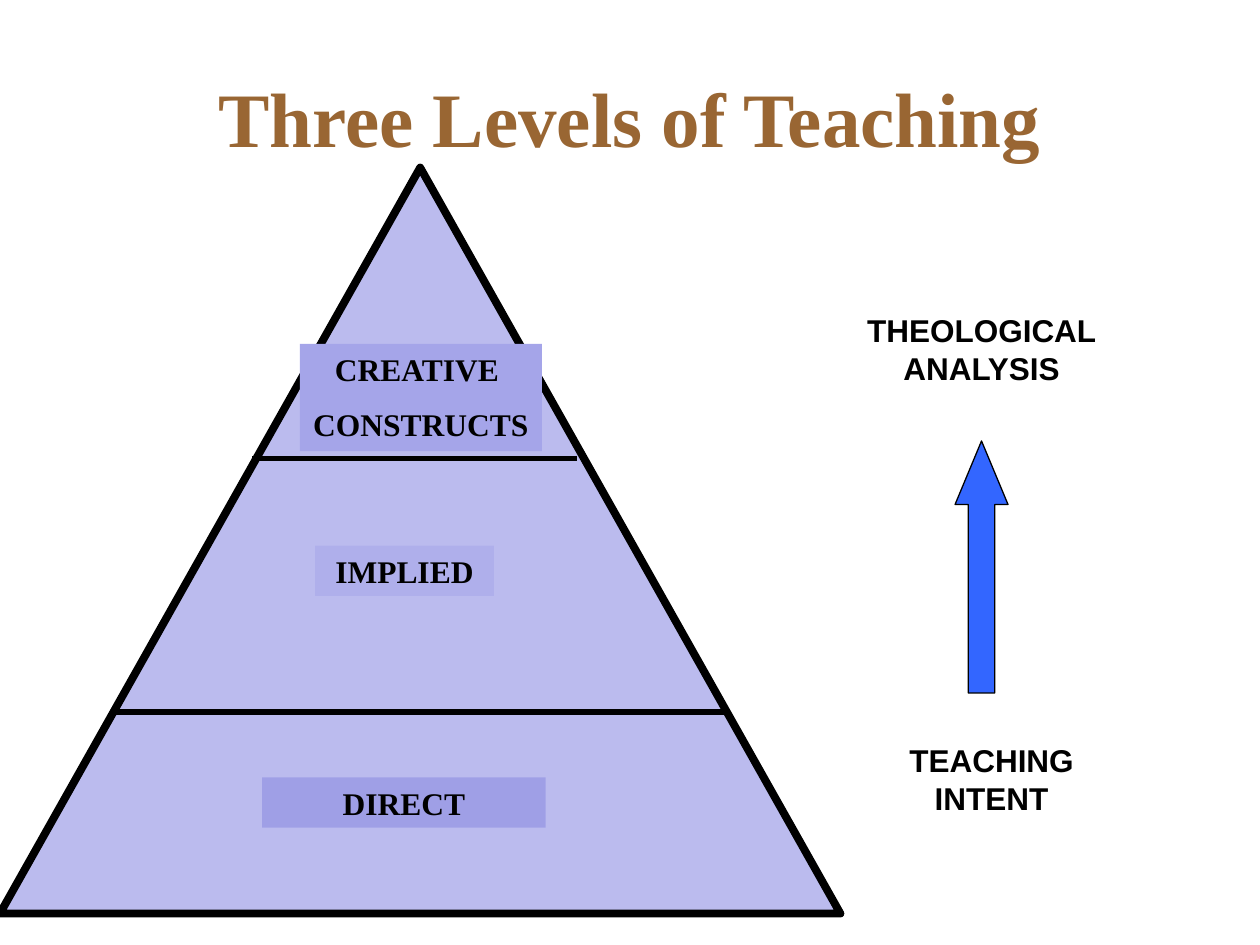
import pptx
import pptx.dml.color
import pptx.enum.shapes
import pptx.enum.text
import pptx.oxml
import pptx.oxml.ns
import pptx.util
from pptx.util import Inches

SHAPES = pptx.enum.shapes.MSO_SHAPE
CENTER = pptx.enum.text.PP_ALIGN.CENTER


def paint(color_format, color, opacity=100):
    color_format.rgb = pptx.dml.color.RGBColor.from_string(color)
    if opacity < 100:
        rgb = color_format._xFill.find(pptx.oxml.ns.qn("a:srgbClr"))
        alpha = pptx.oxml.parse_xml(f'<a:alpha {pptx.oxml.ns.nsdecls("a")} val="{opacity * 1000}"/>')
        rgb.append(alpha)


def write(frame, lines, color, font_format):
    frame.word_wrap = True
    frame.text = "\n".join(lines)
    for number, paragraph in enumerate(frame.paragraphs):
        paragraph.alignment = CENTER
        if number:
            paragraph.space_before = pptx.util.Pt(10)
        font = paragraph.runs[0].font
        for attribute, value in font_format.items():
            setattr(font, attribute, value)
        paint(font.color, color)


title_font = {"name": "Times New Roman", "size": pptx.util.Pt(44), "bold": True}
level_font = {"name": "Times New Roman", "size": pptx.util.Pt(18), "bold": True}
scale_font = {"name": "Arial", "size": pptx.util.Pt(18), "bold": True}

presentation = pptx.Presentation()
presentation.slide_width, presentation.slide_height = Inches(10), Inches(7.5)
slide = presentation.slides.add_slide(presentation.slide_layouts[5])

# Title
title = slide.shapes.title
title_place = {"left": 0.5, "top": 0.3, "width": 9, "height": 1.25}
for attribute, value in title_place.items():
    setattr(title, attribute, Inches(value))
title.text_frame.vertical_anchor = pptx.enum.text.MSO_ANCHOR.MIDDLE
write(title.text_frame, ["Three Levels of Teaching"], "996633", title_font)

# Pyramid
pyramid = slide.shapes.add_shape(
    SHAPES.ISOSCELES_TRIANGLE, Inches(0), Inches(1.33), Inches(6.67), Inches(5.92))
pyramid.shadow.inherit = False
pyramid.fill.solid()
paint(pyramid.fill.fore_color, "7878DE", 50)
paint(pyramid.line.color, "000000")
pyramid.line.width = pptx.util.Pt(4.5)

# Dividers between the levels
for start, end, height in [(0.92, 5.75, 5.65), (2, 4.58, 3.64)]:
    divider = slide.shapes.add_connector(
        pptx.enum.shapes.MSO_CONNECTOR.STRAIGHT,
        Inches(start), Inches(height), Inches(end), Inches(height))
    paint(divider.line.color, "000000")
    divider.line.width = pptx.util.Pt(3)
    divider._element.spPr.append(
        pptx.oxml.parse_xml(f'<a:effectLst {pptx.oxml.ns.nsdecls("a")}/>'))

# Level labels, from the base up
levels = [
    (["DIRECT"], (2.08, 6.17, 2.25, 0.4), "8585E0", 50),
    (["IMPLIED"], (2.5, 4.33, 1.42, 0.4), "A5A5E9", 50),
    (["CREATIVE ", "CONSTRUCTS"], (2.38, 2.73, 1.92, 0.85), "A5A5E9", 100),
]
for lines, place, color, opacity in levels:
    level = slide.shapes.add_shape(SHAPES.RECTANGLE, *map(Inches, place))
    level.shadow.inherit = False
    level.fill.solid()
    paint(level.fill.fore_color, color, opacity)
    level.line.fill.background()
    level.text_frame.vertical_anchor = pptx.enum.text.MSO_ANCHOR.TOP
    level.text_frame.auto_size = pptx.enum.text.MSO_AUTO_SIZE.SHAPE_TO_FIT_TEXT
    write(level.text_frame, lines, "000000", level_font)

# Ends of the scale
scale_ends = [
    ("THEOLOGICAL ANALYSIS", (6.33, 2.42, 2.92, 0.7)),
    ("TEACHING INTENT", (6.83, 5.83, 2.08, 0.7)),
]
for wording, place in scale_ends:
    scale_end = slide.shapes.add_textbox(*map(Inches, place))
    scale_end.text_frame.auto_size = pptx.enum.text.MSO_AUTO_SIZE.SHAPE_TO_FIT_TEXT
    write(scale_end.text_frame, [wording], "000000", scale_font)

# Arrow from intent up to analysis
rise = slide.shapes.add_shape(
    SHAPES.UP_ARROW, Inches(7.58), Inches(3.5), Inches(0.42), Inches(2))
rise.adjustments[0], rise.adjustments[1] = 0.5, 1.2
rise.shadow.inherit = False
rise.fill.solid()
paint(rise.fill.fore_color, "3366FF")
paint(rise.line.color, "000000")
rise.line.width = pptx.util.Pt(0.75)

presentation.save("out.pptx")
